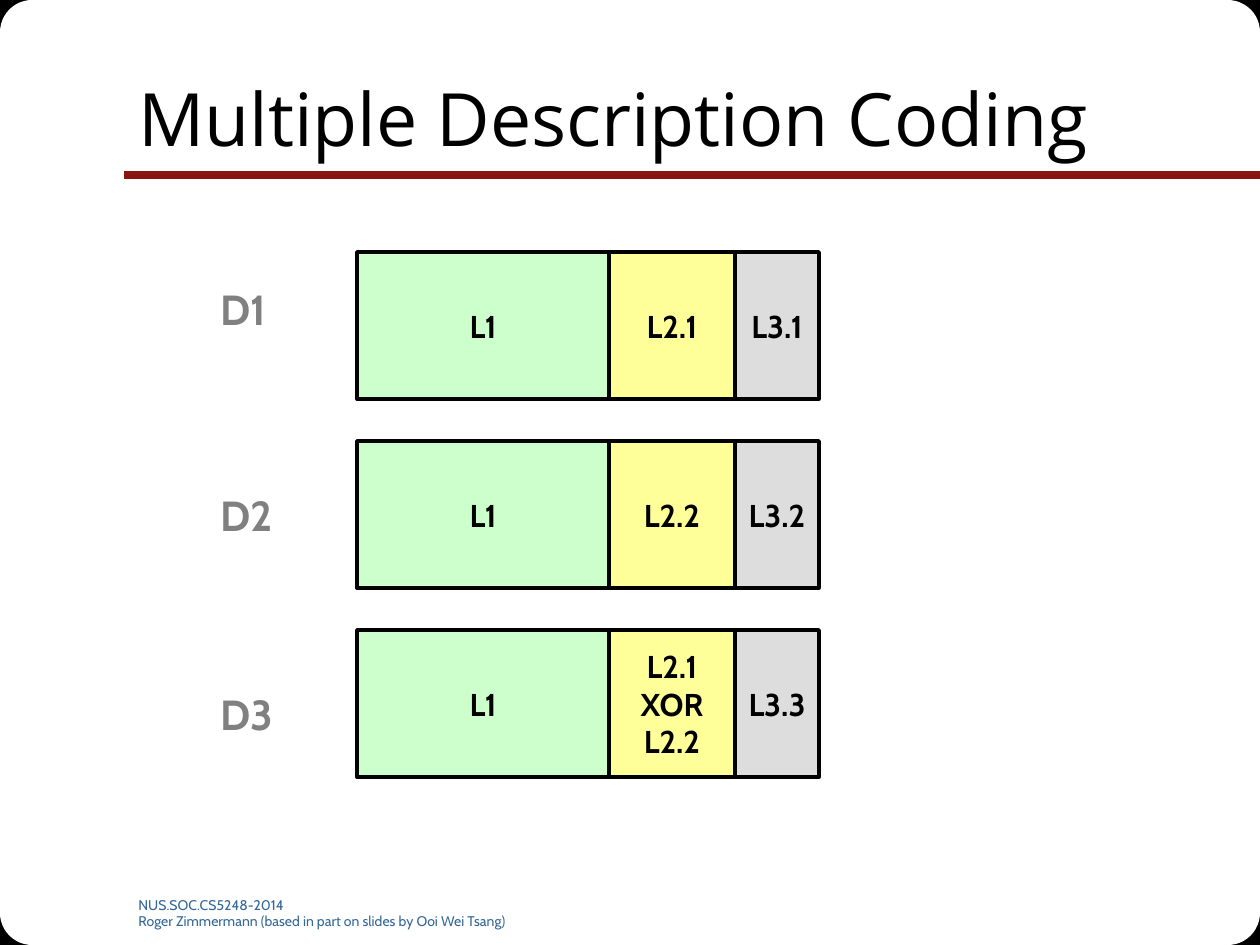
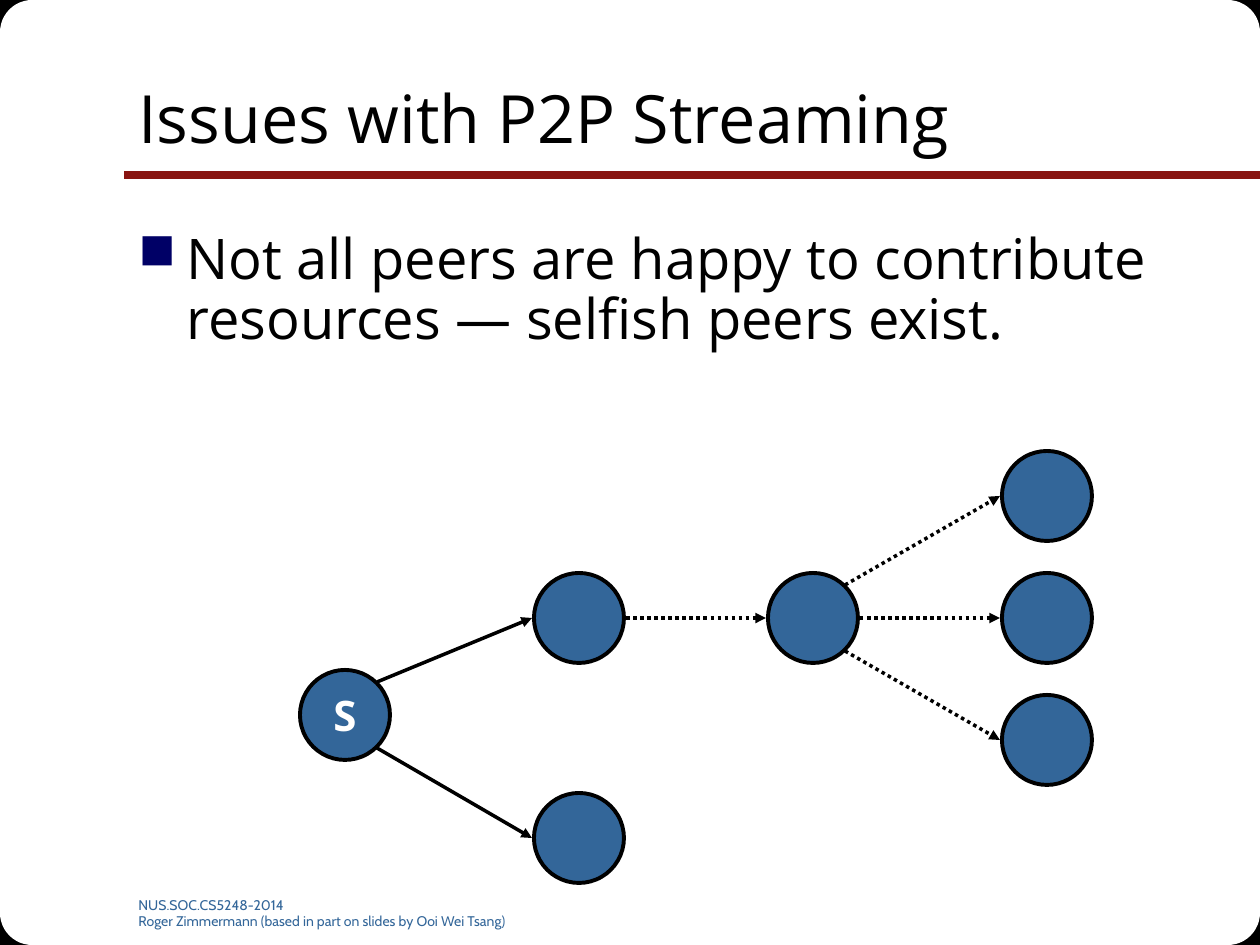
from lxml import etree
from pptx import Presentation
from pptx.dml.color import RGBColor
from pptx.enum.dml import MSO_LINE
from pptx.enum.shapes import MSO_CONNECTOR, MSO_SHAPE
from pptx.enum.text import MSO_ANCHOR, PP_ALIGN
from pptx.oxml.ns import qn
from pptx.util import Pt

RECT, ROUND, OVAL = MSO_SHAPE.RECTANGLE, MSO_SHAPE.ROUNDED_RECTANGLE, MSO_SHAPE.OVAL
STRAIGHT, DOTS = MSO_CONNECTOR.STRAIGHT, MSO_LINE.ROUND_DOT
TOP, MIDDLE = MSO_ANCHOR.TOP, MSO_ANCHOR.MIDDLE
LEFT, CENTER = PP_ALIGN.LEFT, PP_ALIGN.CENTER

SCALE = 914400 / 126
WIDE, HIGH = 1260, 945
HEAD, BODY = "Open Sans", "Cabin"
COLORS = {
    "black": "000000", "white": "FFFFFF", "red": "891411", "blue": "336699",
    "navy": "000066", "gray": "808080", "green": "CCFFCC", "yellow": "FFFF99",
    "silver": "DDDDDD",
}
FOOTER = "NUS.SOC.CS5248-2014\nRoger Zimmermann (based in part on slides by Ooi Wei Tsang)"


def emu(*px):
    return [round(n * SCALE) for n in px]


def color(name):
    return RGBColor.from_string(COLORS[name])


class Deck:
    """Holds the shared style and the current slide."""

    def __init__(self):
        self.prs = Presentation()
        self.prs.slide_width, self.prs.slide_height = emu(WIDE, HIGH)

    def page(self, title, size):
        self.slide = self.prs.slides.add_slide(self.prs.slide_layouts[6])
        corners = [(0, 0), (1, 0), (1, 1), (0, 1)]
        for x, y in corners:
            self.shape(RECT, x * (WIDE - 54), y * (HIGH - 55), 54, 55, "black", 0.75)
        for x, y in corners:
            self.shape(ROUND, x * (WIDE - 193), y * (HIGH - 193), 193, 193, "white")
        self.line(WIDE, 175, 124, 175, "red", 4.5)
        self.text(FOOTER, 126, 890, 431, 35, 8, "blue")
        self.text(title, 126, 38, 1071, 158, size, font=HEAD, anchor=MIDDLE)

    def shape(self, kind, x, y, w, h, fill, width=0):
        shape = self.slide.shapes.add_shape(kind, *emu(x, y, w, h))
        shape.shadow.inherit = False
        shape.fill.solid()
        shape.fill.fore_color.rgb = color(fill)
        if width:
            shape.line.color.rgb = color("black")
            shape.line.width = Pt(width)
        else:
            shape.line.fill.background()
        return shape

    def label(self, shape, text, size, ink="black", font=BODY, bold=False,
              align=LEFT, anchor=TOP):
        frame = shape.text_frame
        frame.text = text
        frame.word_wrap = True
        frame.vertical_anchor = anchor
        if align == CENTER:
            frame.margin_left = frame.margin_right = 0
        for para in frame.paragraphs:
            para.alignment = align
            for run in para.runs:
                run.font.size = Pt(size)
                run.font.name = font
                run.font.bold = bold
                run.font.color.rgb = color(ink)
        return frame

    def text(self, text, x, y, w, h, size, ink="black", **style):
        box = self.slide.shapes.add_textbox(*emu(x, y, w, h))
        return self.label(box, text, size, ink, **style)

    def bullet(self, text, x, y, w, h):
        frame = self.text(text, x, y, w, h, 32, font=HEAD)
        frame.margin_top = emu(11)[0]
        para = frame.paragraphs[0]
        para.line_spacing = 0.9
        props = para._p.get_or_add_pPr()
        indent = emu(48)[0]
        props.set("marL", str(indent))
        props.set("indent", str(-indent))
        tint = etree.SubElement(props, qn("a:buClr"))
        etree.SubElement(tint, qn("a:srgbClr"), val=COLORS["navy"])
        etree.SubElement(props, qn("a:buSzPct"), val="90000")
        etree.SubElement(props, qn("a:buChar"), char="■")

    def line(self, x1, y1, x2, y2, ink="black", width=2, dash=None, arrow=False):
        line = self.slide.shapes.add_connector(STRAIGHT, *emu(x1, y1, x2, y2))
        line.line.color.rgb = color(ink)
        line.line.width = Pt(width)
        if dash:
            line.line.dash_style = dash
        props = line._element.spPr
        if arrow:
            etree.SubElement(props.find(qn("a:ln")), qn("a:tailEnd"), type="triangle")
        etree.SubElement(props, qn("a:effectLst"))

    def cell(self, text, x, y, w, h, fill):
        shape = self.shape(RECT, x, y, w, h, fill, 2)
        self.label(shape, text, 18, bold=True, align=CENTER, anchor=MIDDLE)

    def node(self, x, y, size, text=""):
        shape = self.shape(OVAL, x - size / 2, y - size / 2, size, size, "blue", 2.25)
        if text:
            self.label(shape, text, 24, "white", HEAD, True, CENTER, MIDDLE)

    def link(self, start, end, dash=None):
        (x1, y1), (x2, y2) = start, end
        side = (y2 > y1) - (y2 < y1)
        self.line(x1 + (32 if side else 47), y1 + 33 * side, x2 - 47, y2,
                  dash=dash, arrow=True)


def coding(deck):
    deck.page("Multiple Description Coding", 42)
    rows = [
        ("D1", 277, "L1", "L2.1", "L3.1"),
        ("D2", 483, "L1", "L2.2", "L3.2"),
        ("D3", 682, "L1", "L2.1\nXOR\nL2.2", "L3.3"),
    ]
    parts = [(357, 252, "green"), (609, 126, "yellow"), (735, 84, "silver")]
    for i, (label, top, *names) in enumerate(rows):
        deck.text(label, 208, top, 84, 63, 24, "gray", bold=True)
        for name, (x, w, fill) in zip(names, parts):
            deck.cell(name, x, 252 + 189 * i, w, 147, fill)


def issues(deck):
    deck.page("Issues with P2P Streaming", 38)
    deck.bullet("Not all peers are happy to contribute resources — selfish peers exist.",
                126, 220, 1071, 624)
    source, near, relay, far = [345 + 234 * i for i in range(4)]
    mid, gap = 618, 122
    root, upper, lower, hub = (source, 715), (near, mid), (near, 838), (relay, mid)
    leaves = [(far, mid + gap * i) for i in (-1, 0, 1)]
    deck.node(*root, 90, "S")
    for spot in (hub, lower, upper, *leaves):
        deck.node(*spot, 90)
    for peer in (upper, lower):
        deck.link(root, peer)
    deck.link(upper, hub, DOTS)
    for leaf in leaves:
        deck.link(hub, leaf, DOTS)


def main():
    deck = Deck()
    coding(deck)
    issues(deck)
    deck.prs.save("out.pptx")


if __name__ == "__main__":
    main()
